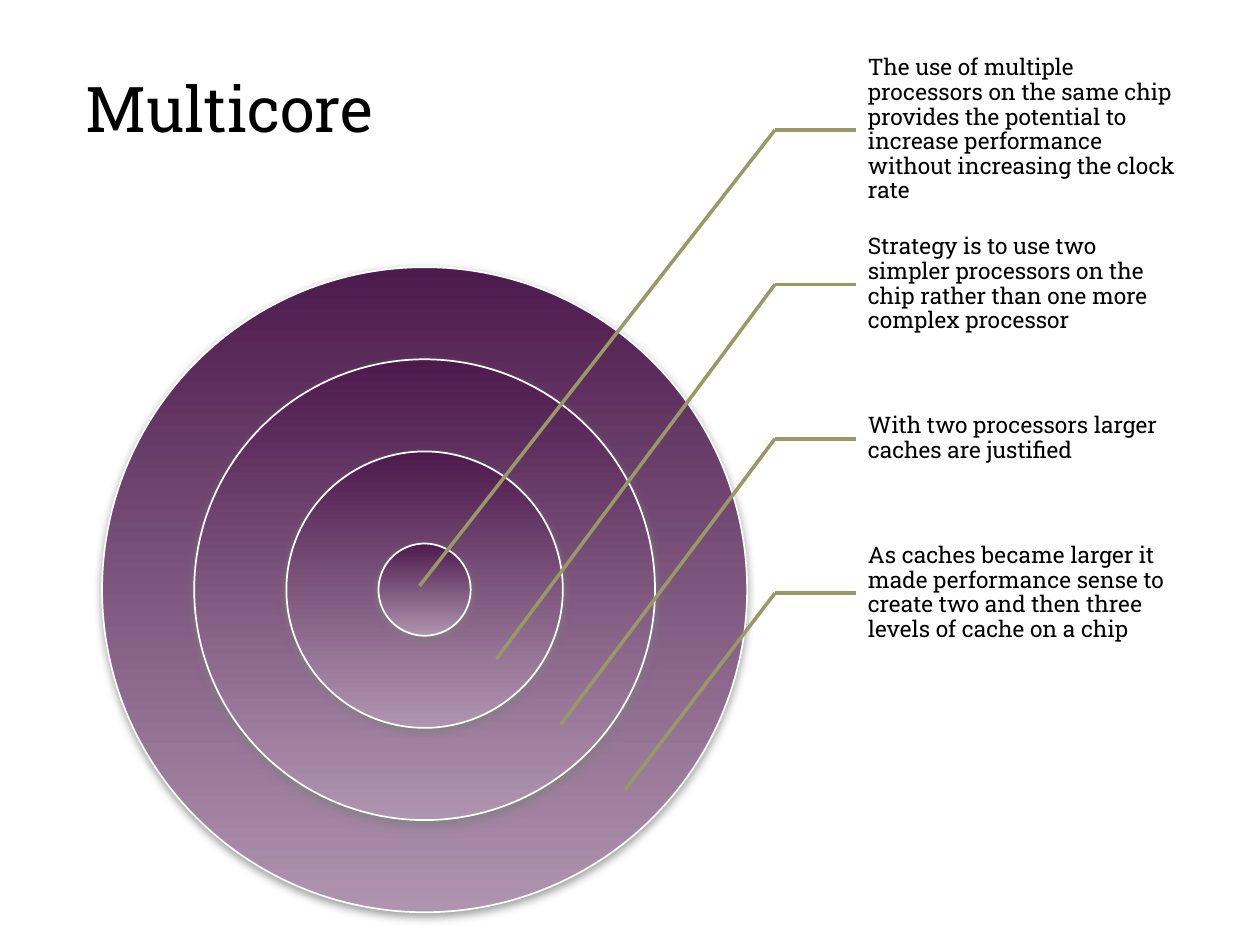
from lxml.etree import SubElement
from pptx import Presentation
from pptx.dml.color import RGBColor
from pptx.enum.shapes import MSO_CONNECTOR as CONNECTOR, MSO_SHAPE as SHAPE
from pptx.enum.text import MSO_ANCHOR as ANCHOR, PP_ALIGN as ALIGN
from pptx.oxml.ns import qn
from pptx.util import Inches, Pt

FONT = "Roboto Slab"
PURPLES = ("4D1A4D", "AF94AF")
OLIVE = "999966"
RING_COUNT = 4

# Each note with the point inside its ring that the leader reaches
CALLOUTS = [
    ("The use of multiple processors on the same chip provides the potential "
     "to increase performance without increasing the clock rate", (3.33, 4.65)),
    ("Strategy is to use two simpler processors on the chip rather than one "
     "more complex processor", (3.94, 5.23)),
    ("With two processors larger caches are justified", (4.45, 5.75)),
    ("As caches became larger it made performance sense to create two and "
     "then three levels of cache on a chip", (4.96, 6.27)),
]


def rgb(hex_color):
    return RGBColor.from_string(hex_color)


def set_all(target, values):
    for name, value in values.items():
        setattr(target, name, value)


def write(frame, text, size, frame_format, paragraph_format):
    set_all(frame, {"word_wrap": True, **frame_format})
    paragraph = frame.paragraphs[0]
    paragraph.text = text
    set_all(paragraph, {"alignment": ALIGN.LEFT, **paragraph_format})
    font = paragraph.runs[0].font
    set_all(font, {"name": FONT, "size": Pt(size), "bold": False})
    font.color.rgb = rgb("000000")


def add_soft_shadow(shape):
    shape.shadow.inherit = False
    effects = shape._element.spPr.find(qn("a:effectLst"))
    shadow = SubElement(effects, qn("a:outerShdw"), blurRad=str(Pt(5)),
                        dist=str(Pt(2)), dir="5400000", rotWithShape="0")
    color = SubElement(shadow, qn("a:srgbClr"), val="808080")
    SubElement(color, qn("a:alpha"), val="75000")


def add_title(slide, left, top, width, height):
    title = slide.shapes.title
    set_all(title, {"left": left, "top": top, "width": width, "height": height})
    write(title.text_frame, "Multicore", 36,
          {"vertical_anchor": ANCHOR.TOP}, {})


def add_rings(slide, left, top, size):
    """Concentric discs whose diameters are 7, 5, 3 and 1 sevenths of the box."""
    band = size / (2 * RING_COUNT - 1)
    for index in range(RING_COUNT):
        diameter = int(size - 2 * index * band)
        offset = int(index * band)
        ring = slide.shapes.add_shape(SHAPE.OVAL, left + offset, top + offset,
                                      diameter, diameter)
        ring.fill.gradient()
        ring.fill.gradient_angle = 270
        for stop, color in zip(ring.fill.gradient_stops, PURPLES):
            stop.color.rgb = rgb(color)
        ring.line.color.rgb = rgb("FFFFFF")
        ring.line.width = Pt(1)
        add_soft_shadow(ring)


def add_leader(slide, start, end):
    leader = slide.shapes.add_connector(CONNECTOR.STRAIGHT, *start, *end)
    leader.line.color.rgb = rgb(OLIVE)
    leader.line.width = Pt(2)
    SubElement(leader._element.spPr, qn("a:effectLst"))
    return leader


def add_callouts(slide, left, top, width, height):
    """Stack equal notes, each with a bent leader to its ring."""
    row_height = height // len(CALLOUTS)
    elbow_x = left - Inches(0.64)
    inset = Inches(0.02)
    for index, (text, target) in enumerate(CALLOUTS):
        row_top = top + index * row_height
        note = slide.shapes.add_textbox(left, row_top, width, row_height)
        write(note.text_frame, text, 13,
              {"vertical_anchor": ANCHOR.MIDDLE, "margin_left": Inches(0.1),
               "margin_right": inset, "margin_top": inset,
               "margin_bottom": inset},
              {"line_spacing": 0.9})
        middle = row_top + row_height // 2
        elbow = (elbow_x, middle)
        add_leader(slide, elbow, (left, middle)).end_connect(note, 1)
        add_leader(slide, elbow, [Inches(value) for value in target])


def main():
    deck = Presentation()
    deck.slide_width, deck.slide_height = Inches(10), Inches(7.5)
    slide = deck.slides.add_slide(deck.slide_layouts[5])
    slide.background.fill.solid()
    slide.background.fill.fore_color.rgb = rgb("FFFFFF")

    add_title(slide, Inches(0.58), Inches(0.5), Inches(8.26), Inches(1.22))
    add_rings(slide, Inches(0.81), Inches(2.12), Inches(5.12))
    add_callouts(slide, Inches(6.79), Inches(0.42), Inches(2.56), Inches(4.9))
    deck.save("out.pptx")


if __name__ == "__main__":
    main()
